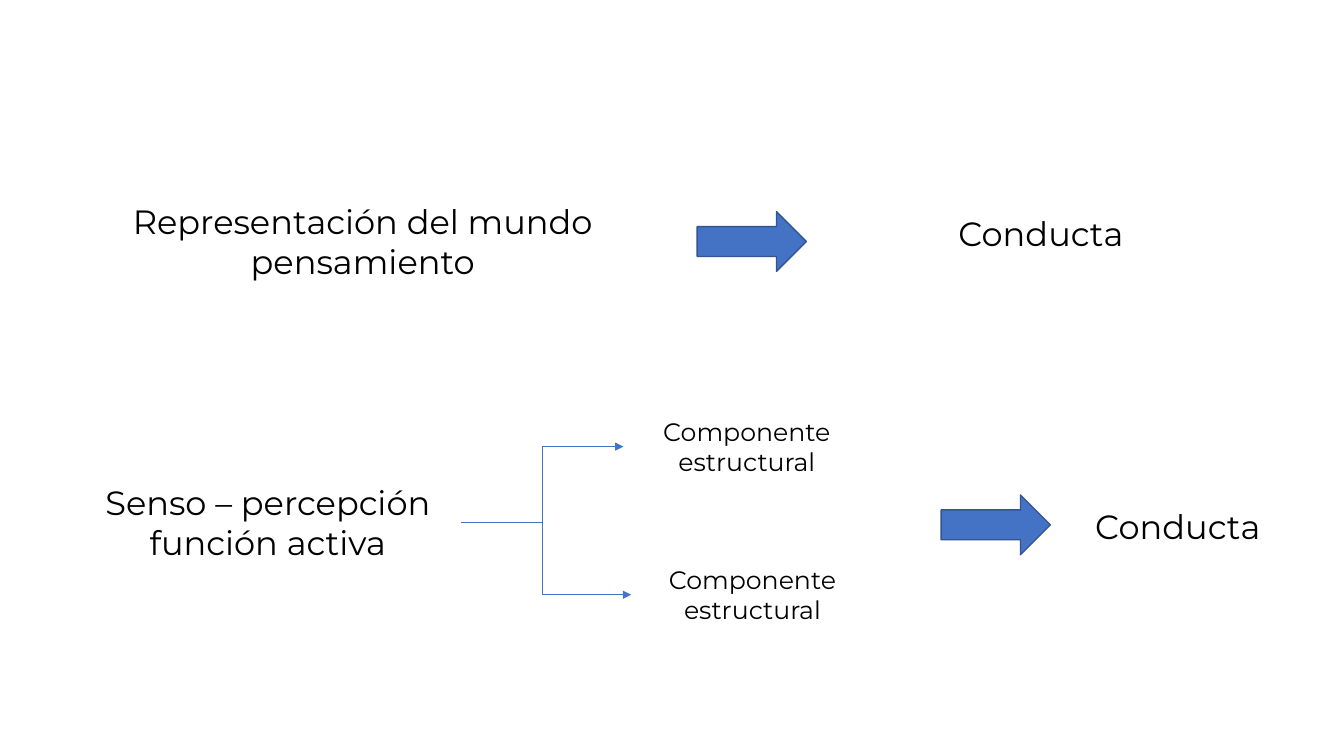
from lxml import etree
from pptx import Presentation
from pptx.dml.color import RGBColor
from pptx.enum.shapes import MSO_CONNECTOR, MSO_SHAPE
from pptx.enum.text import MSO_AUTO_SIZE, PP_ALIGN
from pptx.oxml.ns import qn
from pptx.util import Pt

ELBOW = MSO_CONNECTOR.ELBOW
ARROW = MSO_SHAPE.RIGHT_ARROW
GROW = MSO_AUTO_SIZE.SHAPE_TO_FIT_TEXT
CENTER = PP_ALIGN.CENTER
FONT = "Montserrat"
BLUE, EDGE, BLACK = "4472C4", "325491", "000000"


def color(code):
    return RGBColor.from_string(code)


def label(slide, text, x, y, w, h, size=24):
    box = slide.shapes.add_textbox(Pt(x), Pt(y), Pt(w), Pt(h))
    frame = box.text_frame
    frame.word_wrap = True
    frame.auto_size = GROW
    frame.text = text
    for para in frame.paragraphs:
        para.alignment = CENTER
        for run in para.runs:
            run.font.name = FONT
            run.font.size = Pt(size)
            run.font.color.rgb = color(BLACK)


def arrow(slide, x, y):
    shape = slide.shapes.add_shape(ARROW, Pt(x), Pt(y), Pt(78), Pt(42.7))
    shape.shadow.inherit = False
    shape.fill.solid()
    shape.fill.fore_color.rgb = color(BLUE)
    shape.line.color.rgb = color(EDGE)
    shape.line.width = Pt(1)


def branch(slide, x1, y1, x2, y2, bend):
    link = slide.shapes.add_connector(ELBOW, Pt(x1), Pt(y1), Pt(x2), Pt(y2))
    link.line.color.rgb = color(BLUE)
    link.line.width = Pt(0.5)
    props = link._element.spPr
    guides = props.find(qn("a:prstGeom")).find(qn("a:avLst"))
    etree.SubElement(guides, qn("a:gd"), name="adj1", fmla=f"val {bend}")
    etree.SubElement(props.find(qn("a:ln")), qn("a:tailEnd"), type="triangle")
    etree.SubElement(props, qn("a:effectLst"))


def thought(slide, x, y):
    label(slide, "Representación del mundo\npensamiento", x, y, 384, 65.4)
    arrow(slide, x + 431, y + 11.5)
    label(slide, "Conducta", x + 527, y + 8.6, 299, 36.4)


def senses(slide, x, y):
    label(slide, "Senso – percepción\nfunción activa", x, y + 46.8, 276, 65.4)
    mid = y + 79.2
    branch(slide, x + 278, mid, x + 397.5, y + 131, 47200)
    branch(slide, x + 276, mid, x + 392, y + 25.2, 50000)
    for dx, dy in ((392, 0), (396, 105.8)):
        label(slide, "Componente estructural", x + dx, y + dy, 176.4, 51, 18)
    arrow(slide, x + 619, y + 59.8)
    label(slide, "Conducta", x + 695, y + 64, 186, 36.4)


def main():
    deck = Presentation()
    deck.slide_width, deck.slide_height = Pt(960), Pt(540)
    slide = deck.slides.add_slide(deck.slide_layouts[6])
    thought(slide, 67, 139.7)
    senses(slide, 53.3, 293.8)
    deck.save("out.pptx")


if __name__ == "__main__":
    main()
